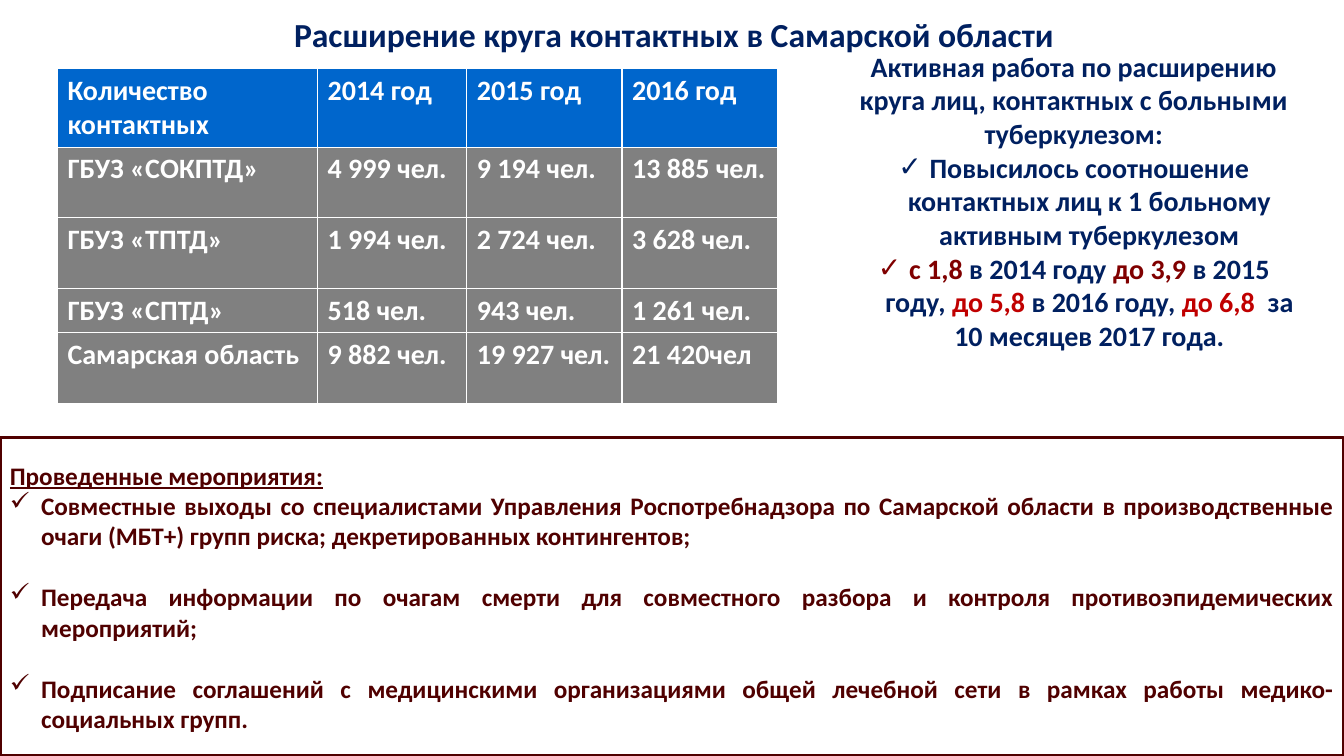
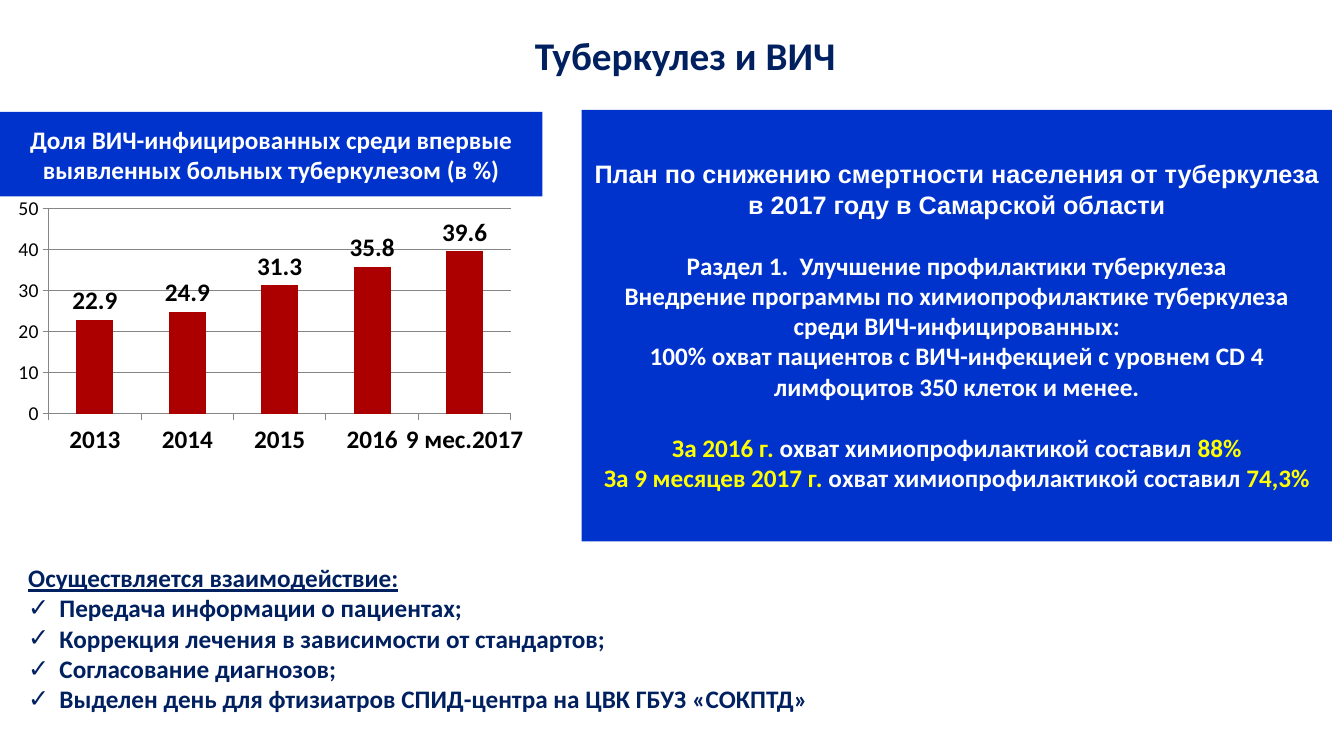
import pptx
import pptx.util
import pptx.dml.color
import pptx.chart.data
import pptx.enum.chart
import pptx.enum.shapes
import pptx.enum.text
from lxml import etree
from pptx.util import Inches, Pt

COLORS = {
    "navy": "002060", "maroon": "800000", "red": "C00000", "dark_red": "500000",
    "bar": "AC0000", "header": "0066CC", "row": "808080", "panel": "0033CC",
    "yellow": "FFFF00", "white": "FFFFFF", "black": "000000", "grid": "868686",
}
FONT = "Calibri"
LINE_GAP = 22  # height of one 18 pt line
ALIGN = pptx.enum.text.PP_ALIGN

# Content: a paragraph is a dict whose text is a string or a list of (text, colour)
CONTACTS_TITLE = "Расширение круга контактных в Самарской области"
CONTACTS = [
    ("Количество контактных", "2014 год", "2015 год", "2016 год"),
    ("ГБУЗ «СОКПТД»", "4 999 чел.", "9 194 чел.", "13 885 чел."),
    ("ГБУЗ «ТПТД»", "1 994 чел.", "2 724 чел.", "3 628 чел."),
    ("ГБУЗ «СПТД»", "518 чел.", "943 чел.", "1 261 чел."),
    ("Самарская область", "9 882 чел.", "19 927 чел.", "21 420чел"),
]
COL_WIDTHS = (2.58, 1.48, 1.54, 1.54)
ROW_HEIGHTS = (0.7, 0.7, 0.7, 0.39, 0.7)
ACTIVE_WORK = [
    {"text": "Активная работа по расширению круга лиц, контактных с больными туберкулезом:"},
    {"text": "Повысилось соотношение контактных лиц к 1 больному активным туберкулезом",
     "check": True},
    {"text": [("с 1,8 ", "maroon"), ("в 2014 году ", "navy"), ("до 3,9 ", "maroon"),
              ("в 2015 году, ", "navy"), ("до 5,8 ", "red"), ("в 2016 году, ", "navy"),
              ("до 6,8  ", "red"), ("за 10 месяцев 2017 года.", "navy")], "check": True},
]
MEASURES = [
    {"text": "Проведенные мероприятия:", "underline": True},
    {"text": "Совместные выходы со специалистами Управления Роспотребнадзора по Самарской "
             "области в производственные очаги (МБТ+) групп риска; декретированных "
             "контингентов;", "check": True},
    {"text": "Передача информации по очагам смерти для совместного разбора и контроля "
             "противоэпидемических мероприятий;", "check": True, "gap": LINE_GAP},
    {"text": "Подписание соглашений с медицинскими организациями общей лечебной сети в "
             "рамках работы медико-социальных групп.", "check": True, "gap": LINE_GAP},
]
HIV_TITLE = "Туберкулез и ВИЧ"
CHART_HEADING = [{"text": "Доля ВИЧ-инфицированных среди впервые выявленных больных "
                          "туберкулезом (в %)"}]
YEARS = ("2013", "2014", "2015", "2016", "9 мес.2017")
HIV_SHARE = (22.9, 24.9, 31.3, 35.8, 39.6)
COVERAGE = "охват химиопрофилактикой составил "
PLAN = [
    {"text": "План по снижению смертности населения от туберкулеза", "font": "Arial"},
    {"text": "в 2017 году в Самарской области", "font": "Arial"},
    {"text": "Раздел 1.  Улучшение профилактики туберкулеза", "gap": LINE_GAP},
    {"text": "Внедрение программы по химиопрофилактике туберкулеза среди "
             "ВИЧ-инфицированных:"},
    {"text": "100% охват пациентов с ВИЧ-инфекцией с уровнем CD 4 лимфоцитов 350 клеток "
             "и менее."},
    {"text": [("За 2016 г. ", "yellow"), (COVERAGE, "white"), ("88%", "yellow")],
     "gap": LINE_GAP},
    {"text": [("За 9 месяцев 2017 г. ", "yellow"), (COVERAGE, "white"),
              ("74,3%", "yellow")]},
]
COOPERATION = [{"text": "Осуществляется взаимодействие:", "underline": True}] + [
    {"text": text, "check": True} for text in (
        "Передача информации о пациентах;",
        "Коррекция лечения в зависимости от стандартов;",
        "Согласование диагнозов;",
        "Выделен день для фтизиатров СПИД-центра на ЦВК ГБУЗ «СОКПТД»",
    )
]


# Shared helpers
def rgb(name):
    return pptx.dml.color.RGBColor.from_string(COLORS[name])


def style_font(font, size, color, name=FONT, bold=True):
    font.name, font.size, font.bold = name, Pt(size), bold
    font.color.rgb = rgb(color)


def set_bullet(p, check):
    pPr = p._p.get_or_add_pPr()
    indent = Inches(0.31) if check else 0
    pPr.set("marL", str(indent))
    pPr.set("indent", str(-indent))
    ns = pptx.oxml.ns.qn("a:buChar" if check else "a:buNone")
    bullet = etree.SubElement(pPr, ns)
    if check:
        bullet.set("char", "✓")


def write(tf, paragraphs, size, color, align):
    tf.word_wrap = True
    tf.auto_size = pptx.enum.text.MSO_AUTO_SIZE.NONE
    tf.vertical_anchor = pptx.enum.text.MSO_ANCHOR.MIDDLE
    for i, item in enumerate(paragraphs):
        p = tf.add_paragraph() if i else tf.paragraphs[0]
        p.alignment = align
        p.space_before = Pt(item.get("gap", 0))
        set_bullet(p, item.get("check", False))
        text = item["text"]
        for part, part_color in [(text, color)] if isinstance(text, str) else text:
            r = p.add_run()
            r.text = part
            style_font(r.font, size, part_color, item.get("font", FONT))
            if item.get("underline"):
                r.font.underline = True


def place(sp, box):
    sp.left, sp.top, sp.width, sp.height = (Inches(v) for v in box)


def add_slide(prs, title, title_box, title_size, body, body_box, body_size, body_align):
    s = prs.slides.add_slide(prs.slide_layouts[1])
    place(s.shapes.title, title_box)
    write(s.shapes.title.text_frame, [{"text": title}], title_size, "navy", ALIGN.CENTER)
    place(s.placeholders[1], body_box)
    write(s.placeholders[1].text_frame, body, body_size, "navy", body_align)
    return s


def add_panel(s, box, paragraphs, color, align, fill=None, line=None):
    sp = s.shapes.add_shape(pptx.enum.shapes.MSO_SHAPE.RECTANGLE,
                            *(Inches(v) for v in box))
    sp.shadow.inherit = False
    if fill:
        sp.fill.solid()
        sp.fill.fore_color.rgb = rgb(fill)
    else:
        sp.fill.background()
    if line:
        sp.line.color.rgb = rgb(line)
        sp.line.width = Pt(2.25)
    else:
        sp.line.fill.background()
    write(sp.text_frame, paragraphs, 18, color, align)


def add_contacts_table(s):
    table = s.shapes.add_table(
        len(CONTACTS), len(COL_WIDTHS), Inches(0.57), Inches(0.68),
        Inches(sum(COL_WIDTHS)), Inches(sum(ROW_HEIGHTS))).table
    for column, width in zip(table.columns, COL_WIDTHS):
        column.width = Inches(width)
    for i, (row, height, texts) in enumerate(zip(table.rows, ROW_HEIGHTS, CONTACTS)):
        row.height = Inches(height)
        for cell, text in zip(row.cells, texts):
            cell.fill.solid()
            cell.fill.fore_color.rgb = rgb("row" if i else "header")
            cell.text_frame.text = text
            style_font(cell.text_frame.paragraphs[0].runs[0].font, 20, "white")


def set_plot_area(chart, x, y, w, h):
    plot_area = chart._chartSpace.chart.plotArea
    qn = pptx.oxml.ns.qn
    for old in plot_area.findall(qn("c:layout")):
        plot_area.remove(old)
    layout = etree.Element(qn("c:layout"))
    plot_area.insert(0, layout)
    manual = etree.SubElement(layout, qn("c:manualLayout"))
    settings = (("layoutTarget", "inner"), ("xMode", "edge"), ("yMode", "edge"),
                ("x", x), ("y", y), ("w", w), ("h", h))
    for tag, value in settings:
        etree.SubElement(manual, qn("c:" + tag)).set("val", str(value))


def add_share_chart(s):
    xl = pptx.enum.chart
    data = pptx.chart.data.CategoryChartData()
    data.categories = YEARS
    data.add_series("Доля, %", HIV_SHARE)
    chart = s.shapes.add_chart(
        xl.XL_CHART_TYPE.COLUMN_CLUSTERED, Inches(0.03), Inches(1.94),
        Inches(5.66), Inches(2.58), data).chart
    chart.has_legend = chart.has_title = False
    style_font(chart.font, 18, "black", bold=False)
    set_plot_area(chart, 0.08, 0.05, 0.81, 0.79)
    # Axes
    for axis, size, bold in ((chart.category_axis, 18, True),
                             (chart.value_axis, 14, False)):
        style_font(axis.tick_labels.font, size, "black", bold=bold)
        axis.major_tick_mark = xl.XL_TICK_MARK.OUTSIDE
        axis.format.line.color.rgb = rgb("grid")
    value_axis = chart.value_axis
    value_axis.minimum_scale, value_axis.maximum_scale = 0, 50
    value_axis.major_unit = 10
    value_axis.major_gridlines.format.line.color.rgb = rgb("grid")
    # Columns and labels
    plot = chart.plots[0]
    plot.gap_width = 150
    plot.vary_by_categories = False
    fill = plot.series[0].format.fill
    fill.solid()
    fill.fore_color.rgb = rgb("bar")
    plot.has_data_labels = True
    labels = plot.data_labels
    labels.show_value = True
    labels.position = xl.XL_LABEL_POSITION.OUTSIDE_END
    style_font(labels.font, 18, "black")


def main():
    prs = pptx.Presentation()
    prs.slide_width, prs.slide_height = Inches(13.33), Inches(7.5)

    # Contacts
    s = add_slide(prs, CONTACTS_TITLE, (0.02, 0, 13.33, 0.68), 24,
                  ACTIVE_WORK, (8.28, 0.68, 4.74, 2.62), 20, ALIGN.CENTER)
    add_contacts_table(s)
    add_panel(s, (0, 4.34, 13.33, 3.16), MEASURES, "dark_red", ALIGN.JUSTIFY,
              line="dark_red")

    # Tuberculosis and HIV
    s = add_slide(prs, HIV_TITLE, (0.97, 0, 11.65, 1.09), 28,
                  COOPERATION, (0.18, 5.37, 12.85, 1.92), 18, ALIGN.JUSTIFY)
    add_share_chart(s)
    add_panel(s, (0, 1.11, 5.38, 0.84), CHART_HEADING, "white", ALIGN.CENTER, fill="panel")
    add_panel(s, (5.77, 1.09, 7.44, 4.28), PLAN, "white", ALIGN.CENTER, fill="panel")

    prs.save("out.pptx")


if __name__ == "__main__":
    main()
